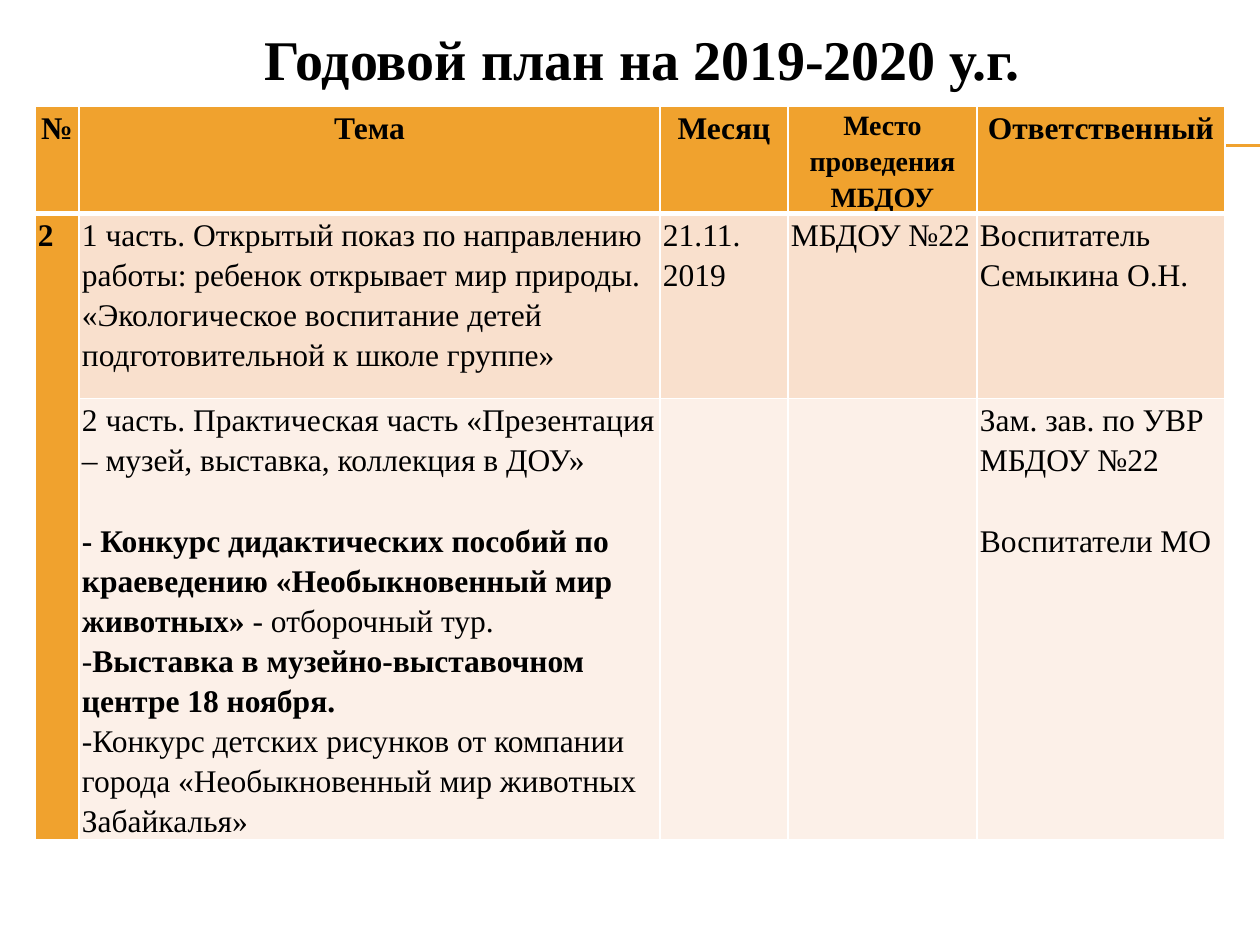
from lxml.etree import SubElement
from pptx import Presentation
from pptx.dml.color import RGBColor
from pptx.enum.shapes import MSO_CONNECTOR
from pptx.enum.text import MSO_ANCHOR, PP_ALIGN
from pptx.oxml.ns import qn
from pptx.util import Emu, Pt

ORANGE = RGBColor(0xF0, 0xA2, 0x2E)
PEACH = RGBColor(0xF9, 0xE0, 0xCD)
CREAM = RGBColor(0xFC, 0xF0, 0xE8)
WHITE = RGBColor(0xFF, 0xFF, 0xFF)
BLACK = RGBColor(0x00, 0x00, 0x00)
SCALE = 914400 / 126


def px(n):
    return Emu(round(n * SCALE))


def add_text(p, text, size=18, bold=False, align=PP_ALIGN.LEFT, spacing=1.15, before=0):
    p.alignment = align
    p.line_spacing = spacing
    p.space_before = Pt(before)
    r = p.add_run()
    r.text = text
    r.font.name = "Times New Roman"
    r.font.size = Pt(size)
    r.font.bold = bold
    r.font.color.rgb = BLACK


prs = Presentation()
prs.slide_width, prs.slide_height = px(1260), px(945)
s = prs.slides.add_slide(prs.slide_layouts[5])

title = s.shapes.title
title.left, title.top, title.width, title.height = px(44), px(0), px(1197), px(116)
title.text_frame.vertical_anchor = MSO_ANCHOR.MIDDLE
add_text(title.text_frame.paragraphs[0], "Годовой план на 2019-2020 у.г.",
         size=32, bold=True, align=PP_ALIGN.CENTER, spacing=1.0)

for y in (145, 146):
    rule = s.shapes.add_connector(MSO_CONNECTOR.STRAIGHT, px(71), px(y), px(1260), px(y))
    rule.line.color.rgb = ORANGE
    rule.line.width = Pt(0.75)
    SubElement(rule._element.spPr, qn("a:effectLst"))

headers = ["№", "Тема", "Месяц", "Место проведения МБДОУ", "Ответственный"]
body = {
    (1, 0): [[("2", True)]],
    (1, 1): [
        [("1 часть. Открытый показ по направлению работы: ребенок открывает мир природы.", False)],
        [("«Экологическое воспитание детей подготовительной к школе группе»", False)],
    ],
    (1, 2): [[("21.11.", False)], [("2019", False)]],
    (1, 3): [[("МБДОУ №22", False)]],
    (1, 4): [[("Воспитатель Семыкина О.Н.", False)]],
    (2, 1): [
        [("2 часть. Практическая часть «Презентация – музей, выставка, коллекция в ДОУ»", False)],
        [("- Конкурс дидактических пособий по краеведению «Необыкновенный мир животных» ", True),
         ("- отборочный тур.", False)],
        [("-", False), ("Выставка в музейно-выставочном центре 18 ноября.", True)],
        [("-Конкурс детских рисунков от компании города «Необыкновенный мир животных Забайкалья»",
          False)],
    ],
    (2, 4): [[("Зам. зав. по УВР МБДОУ №22", False)], [("Воспитатели МО", False)]],
}
col_widths = [44, 581, 128, 189, 248]
row_heights = [28, 185, 145]
row_fills = [ORANGE, PEACH, CREAM]

frame = s.shapes.add_table(3, 5, px(35), px(106), px(sum(col_widths)), px(sum(row_heights)))
table = frame.table
for col, width in zip(table.columns, col_widths):
    col.width = px(width)
for row, height in zip(table.rows, row_heights):
    row.height = px(height)
frame.height = px(779)
table.cell(1, 0).merge(table.cell(2, 0))

for i, fill in enumerate(row_fills):
    for j, header in enumerate(headers):
        cell = table.cell(i, j)
        cell.margin_left = cell.margin_right = px(3)
        cell.margin_top = cell.margin_bottom = 0
        tcPr = cell._tc.get_or_add_tcPr()
        for side in "LRTB":
            thick = (i, side) in ((0, "B"), (1, "T"))
            ln = SubElement(tcPr, qn(f"a:ln{side}"), w=str(Pt(3 if thick else 1)))
            color = SubElement(ln, qn("a:solidFill"))
            SubElement(color, qn("a:srgbClr"), val=str(WHITE))
        cell.fill.solid()
        cell.fill.fore_color.rgb = ORANGE if j == 0 else fill
        tf = cell.text_frame
        if i == 0:
            add_text(tf.paragraphs[0], header, size=16 if j == 3 else 18,
                     bold=True, align=PP_ALIGN.CENTER)
        for k, runs in enumerate(body.get((i, j), [])):
            p = tf.paragraphs[0] if k == 0 else tf.add_paragraph()
            for text, bold in runs:
                add_text(p, text, bold=bold, before=23 if (i, k) == (2, 1) else 0)

prs.save("out.pptx")
